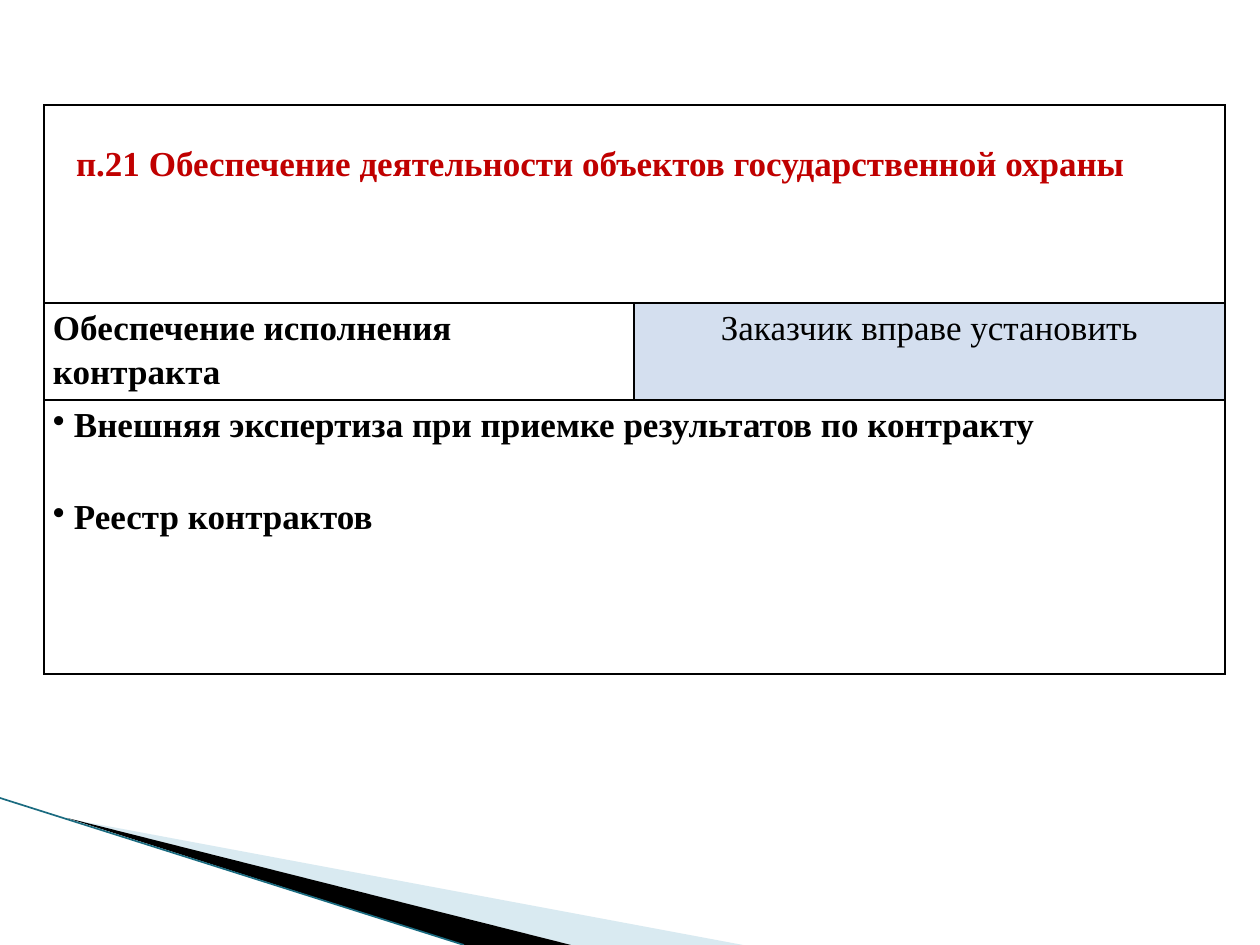
from pptx import Presentation
from pptx.dml.color import RGBColor as RGB
from pptx.enum.shapes import MSO_CONNECTOR as CONNECTOR
from pptx.enum.text import PP_ALIGN as ALIGN
from pptx.oxml.ns import qn
from pptx.util import Emu, Pt
from lxml.etree import SubElement

SCALE = 914400 / 126
THEME = {
    "font": "Times New Roman", "size": Pt(20),
    "text": RGB(0, 0, 0), "heading": RGB(192, 0, 0),
    "highlight": RGB(0xD4, 0xDF, 0xEF), "wedge": RGB(0xA0, 0xCB, 0xDC),
    "band": RGB(0, 0, 0), "edge": RGB(0x1A, 0x6B, 0x80), "border": "000000",
}


def px(value):
    return Emu(round(value * SCALE))


def write(paragraph, text, color=THEME["text"], bold=True, align=ALIGN.LEFT, spacing=1.15):
    paragraph.text = text
    paragraph.alignment = align
    paragraph.line_spacing = spacing
    font = paragraph.font
    font.name, font.size = THEME["font"], THEME["size"]
    font.bold = bold
    font.color.rgb = color


presentation = Presentation()
presentation.slide_width, presentation.slide_height = px(1260), px(945)
slide = presentation.slides.add_slide(presentation.slide_layouts[6])

wedges = [
    ("wedge", [(69, 819), (743, 945), (571, 945)], 40),
    ("band", [(67, 818), (571, 945), (464, 945)], 100),
]
for color, points, opacity in wedges:
    builder = slide.shapes.build_freeform(*points[0], scale=SCALE)
    builder.add_line_segments(points[1:], close=True)
    shape = builder.convert_to_shape()
    shape.shadow.inherit = False
    shape.line.fill.background()
    shape.fill.solid()
    shape.fill.fore_color.rgb = THEME[color]
    if opacity < 100:
        color_node = shape._element.spPr.find(f".//{qn('a:srgbClr')}")
        SubElement(color_node, qn("a:alpha"), val=str(opacity * 1000))

edge = slide.shapes.add_connector(CONNECTOR.STRAIGHT, px(0), px(798), px(464), px(945))
edge.line.color.rgb = THEME["edge"]
edge.line.width = Pt(0.95)
SubElement(edge._element.spPr, qn("a:effectLst"))

table = slide.shapes.add_table(3, 2, px(44), px(105), px(1181), px(569)).table
table.first_row = table.horz_banding = False
for column, width in zip(table.columns, (590, 591)):
    column.width = px(width)
for row, height in zip(table.rows, (198, 97, 274)):
    row.height = px(height)

for cell in table.iter_cells():
    properties = cell._tc.get_or_add_tcPr()
    for side in ("lnL", "lnR", "lnT", "lnB"):
        border = SubElement(properties, qn(f"a:{side}"), w=str(Pt(1)))
        fill = SubElement(border, qn("a:solidFill"))
        SubElement(fill, qn("a:srgbClr"), val=THEME["border"])
    cell.fill.background()
    cell.margin_left = cell.margin_right = px(9)
    cell.margin_top = cell.margin_bottom = 0

heading, requirement, permission, notes = (
    table.cell(*place) for place in ((0, 0), (1, 0), (1, 1), (2, 0)))
heading.merge(table.cell(0, 1))
notes.merge(table.cell(2, 1))

heading.margin_top, heading.margin_right = px(40), px(77)
write(heading.text_frame.paragraphs[0], "п.21 Обеспечение деятельности объектов государственной охраны",
      THEME["heading"], align=ALIGN.CENTER, spacing=1.0)
write(requirement.text_frame.paragraphs[0], "Обеспечение исполнения контракта")
permission.fill.solid()
permission.fill.fore_color.rgb = THEME["highlight"]
write(permission.text_frame.paragraphs[0], "Заказчик вправе установить", bold=False, align=ALIGN.CENTER)

items = ["Внешняя экспертиза при приемке результатов по контракту", "Реестр контрактов"]
for index, item in enumerate(items):
    frame = notes.text_frame
    paragraph = frame.add_paragraph() if index else frame.paragraphs[0]
    properties = paragraph._p.get_or_add_pPr()
    properties.set("marL", str(px(21)))
    properties.set("indent", str(-px(21)))
    SubElement(properties, qn("a:buChar"), char="•")
    write(paragraph, item)
    if index:
        paragraph.space_before = Pt(27)

presentation.save("out.pptx")
